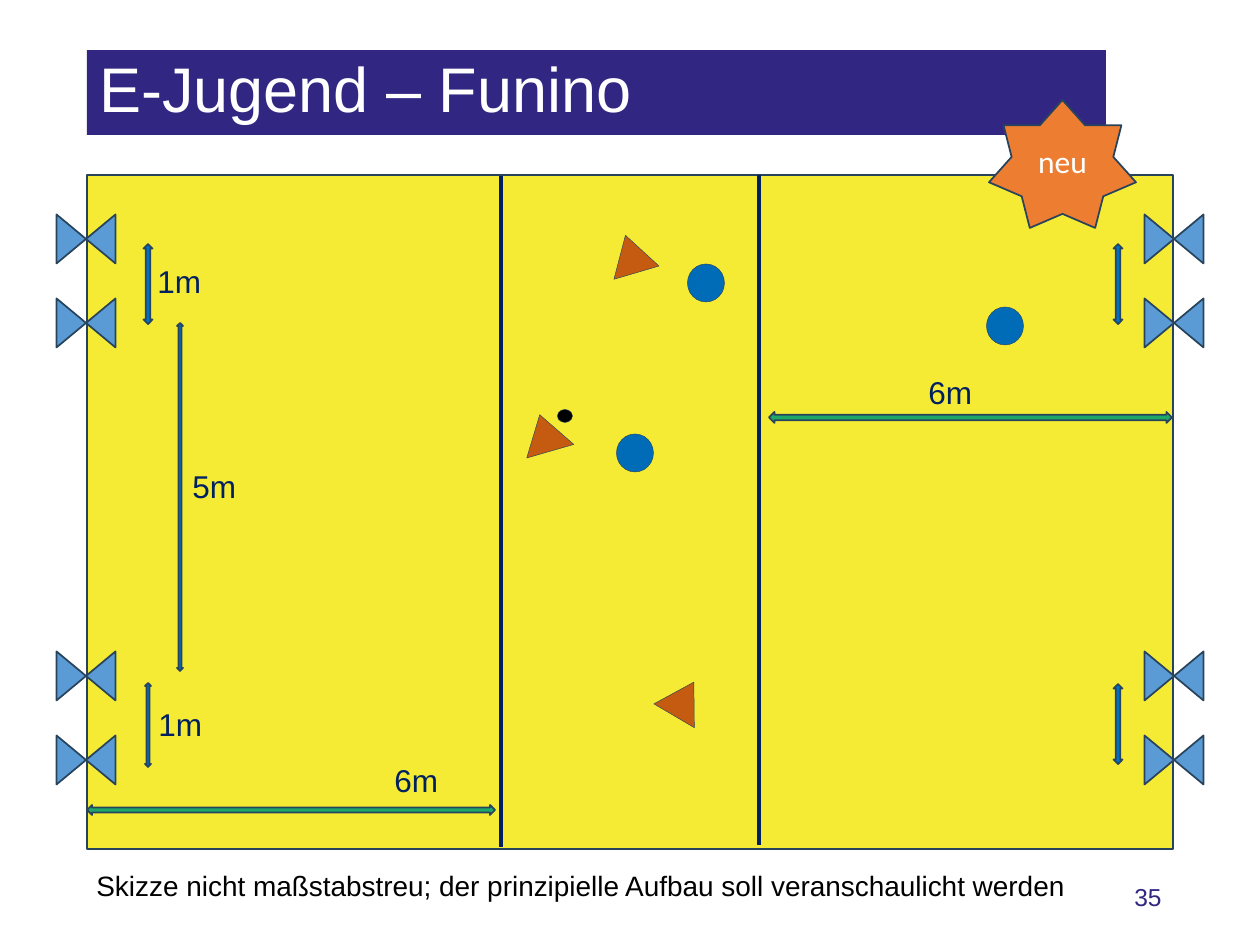
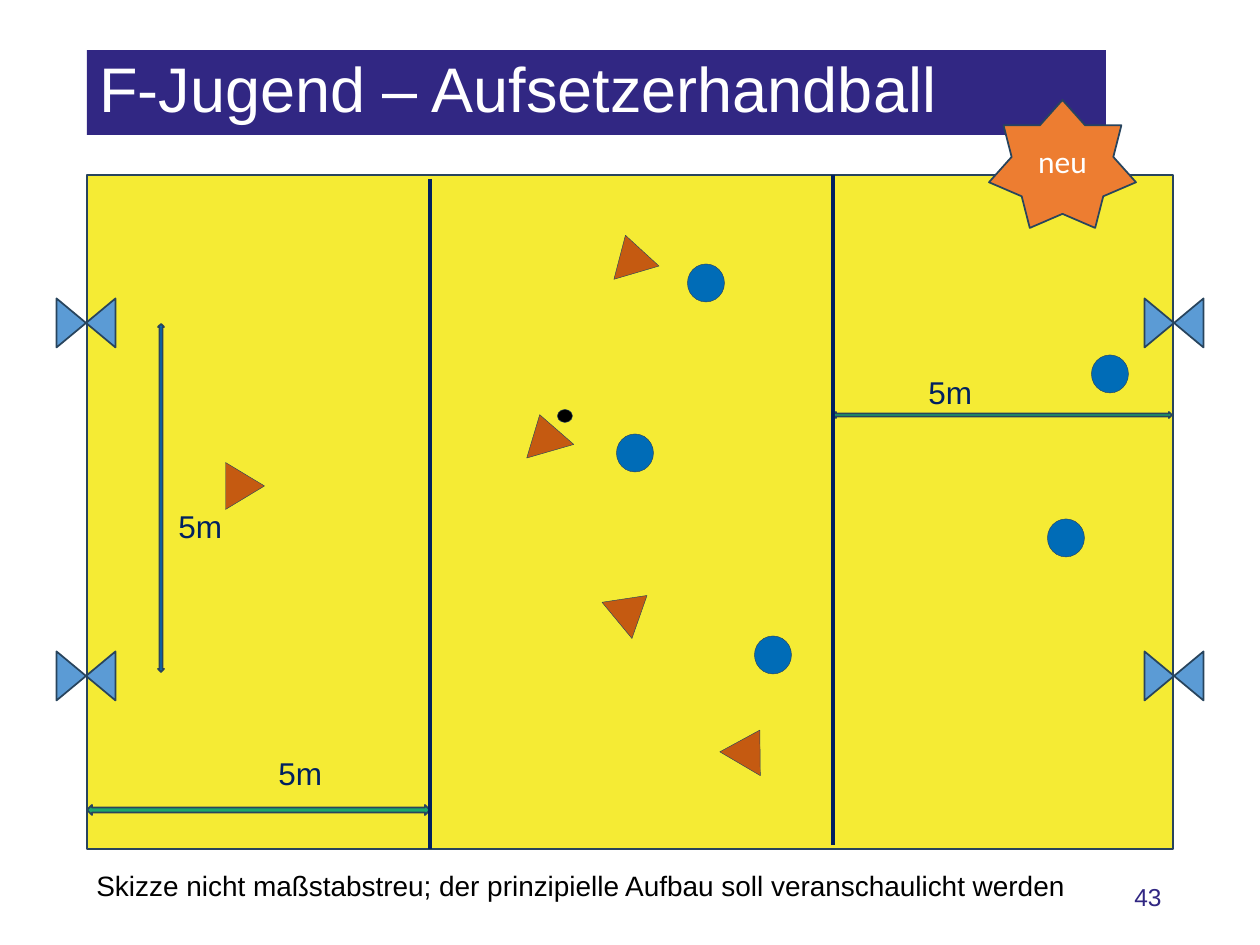
import pptx
import pptx.util
import pptx.dml.color
import pptx.enum.shapes
import pptx.enum.text
import pptx.oxml.ns
import lxml.etree

EMU_PER_PX = 914400 / 126
COLOURS = {
    "brand": "312783", "white": "FFFFFF", "black": "000000", "field": "F5EB34",
    "outline": "28445D", "goal": "5B9BD5", "goal_distance": "0070C0",
    "zone_distance": "1DA868", "navy": "002060", "attacker": "C55A11",
    "defender": "006CB7", "badge": "ED7D31",
}
PRESETS = pptx.enum.shapes.MSO_SHAPE
ALIGN = pptx.enum.text.PP_ALIGN
ANCHOR = pptx.enum.text.MSO_ANCHOR

# Shared geometry of the pitch
FIELD = (87, 175, 1086, 674)
GOAL_LINES = (86, 1174)
CAPTION = "Skizze nicht maßstabstreu; der prinzipielle Aufbau soll veranschaulicht werden"


def px(*lengths):
    return [pptx.util.Emu(round(length * EMU_PER_PX)) for length in lengths]


def colour(name):
    return pptx.dml.color.RGBColor.from_string(COLOURS[name])


def write_text(shape, text, size, color, font="Arial", align=ALIGN.LEFT,
               anchor=ANCHOR.TOP, wrap=True, spacing=None):
    frame = shape.text_frame
    frame.word_wrap = wrap
    if not wrap:
        frame.auto_size = pptx.enum.text.MSO_AUTO_SIZE.SHAPE_TO_FIT_TEXT
    frame.vertical_anchor = anchor
    paragraph = frame.paragraphs[0]
    paragraph.alignment = align
    if spacing:
        paragraph.line_spacing = spacing
    run = paragraph.add_run()
    run.text = text
    run.font.name = font
    run.font.size = pptx.util.Pt(size)
    run.font.color.rgb = colour(color)


def add_text(slide, box, text, **text_format):
    write_text(slide.shapes.add_textbox(*px(*box)), text, **text_format)


def add_preset(slide, preset, box, fill, line_width=1, rotation=0):
    shape = slide.shapes.add_shape(preset, *px(*box))
    shape.shadow.inherit = False
    shape.rotation = rotation
    shape.fill.solid()
    shape.fill.fore_color.rgb = colour(fill)
    if line_width:
        shape.line.color.rgb = colour("outline")
        shape.line.width = pptx.util.Pt(line_width)
    else:
        shape.line.fill.background()
    return shape


def add_centred(slide, preset, centre, size, fill, **style):
    (x, y), (width, height) = centre, size
    box = (x - width / 2, y - height / 2, width, height)
    return add_preset(slide, preset, box, fill, **style)


def add_goal_distance(slide, x, top, length, thickness):
    add_centred(slide, PRESETS.LEFT_RIGHT_ARROW, (x, top + length / 2),
                (length, thickness), "goal_distance", rotation=90)


def add_zone_line(slide, x, top, bottom):
    line = slide.shapes.add_connector(
        pptx.enum.shapes.MSO_CONNECTOR.STRAIGHT, *px(x, top, x, bottom))
    line.line.color.rgb = colour("navy")
    line.line.width = pptx.util.Pt(2.25)
    lxml.etree.SubElement(line._element.spPr, pptx.oxml.ns.qn("a:effectLst"))


def add_attacker(slide, centre, rotation, size=(47, 39)):
    add_centred(slide, PRESETS.ISOSCELES_TRIANGLE, centre, size, "attacker",
                line_width=0.25, rotation=rotation)


def add_defender(slide, centre):
    add_centred(slide, PRESETS.OVAL, centre, (37, 38), "defender", line_width=0.25)


def add_frame(slide, title, number):
    band = add_preset(slide, PRESETS.RECTANGLE, (87, 50, 1019, 85), "brand", line_width=0)
    write_text(band, title, size=36, color="white", anchor=ANCHOR.MIDDLE, spacing=0.9)
    add_text(slide, (890, 876, 284, 50), str(number), size=14, color="brand",
             align=ALIGN.RIGHT)
    add_text(slide, (84, 862, 1000, 47), CAPTION, size=16, color="black", wrap=False)


def add_badge(slide):
    star = add_preset(slide, PRESETS.STAR_7_POINT, (989, 100, 147, 128), "badge")
    write_text(star, "neu", size=18, color="white", font="Calibri",
               align=ALIGN.CENTER, anchor=ANCHOR.MIDDLE)


def build_game(presentation, game):
    slide = presentation.slides.add_slide(presentation.slide_layouts[6])
    add_frame(slide, game["title"], game["number"])
    add_preset(slide, PRESETS.RECTANGLE, FIELD, "field")

    # Goals stand on both goal lines at the same heights
    for x in GOAL_LINES:
        for y in game["goal_heights"]:
            add_centred(slide, PRESETS.FLOWCHART_COLLATE, (x, y), (49, 59), "goal",
                        rotation=90)

    # Zones and distances
    for arrow in game["goal_distances"]:
        add_goal_distance(slide, *arrow)
    for box in game["zone_distances"]:
        add_preset(slide, PRESETS.LEFT_RIGHT_ARROW, box, "zone_distance")
    for line in game["zone_lines"]:
        add_zone_line(slide, *line)
    for text, left, top in game["labels"]:
        add_text(slide, (left, top, 69, 50), text, size=18, color="navy", wrap=False)

    # Players and ball; the first two of each team are the same in every game
    add_attacker(slide, (631, 254), 343.6)
    add_attacker(slide, (545, 433), 343.9, size=(49, 38))
    for centre, rotation in game["attackers"]:
        add_attacker(slide, centre, rotation)
    for centre in [(706, 283), (635, 453)] + game["defenders"]:
        add_defender(slide, centre)
    add_centred(slide, PRESETS.OVAL, (565, 416), (15, 13), "black", line_width=0.25)
    add_badge(slide)


FUNINO = {
    "title": "E-Jugend – Funino",
    "number": 35,
    "goal_heights": (239, 323, 676, 760),
    # x, top, length, thickness
    "goal_distances": [(180, 323, 348, 6), (148, 244, 80, 9), (148, 683, 84, 6),
                       (1118, 244, 80, 9), (1118, 684, 80, 9)],
    "zone_distances": [(87, 805, 408, 10), (769, 412, 403, 11)],
    # x, top, bottom
    "zone_lines": [(501, 176, 847), (759, 175, 845)],
    "labels": [("5m", 180, 461), ("1m", 146, 699), ("1m", 145, 256),
               ("6m", 382, 755), ("6m", 916, 367)],
    "attackers": [((684, 699), 30.5)],
    "defenders": [(1005, 326)],
}

AUFSETZERHANDBALL = {
    "title": "F-Jugend – Aufsetzerhandball",
    "number": 43,
    "goal_heights": (323, 676),
    "goal_distances": [(161, 324, 348, 6)],
    "zone_distances": [(87, 805, 343, 10), (833, 412, 339, 6)],
    "zone_lines": [(430, 179, 849), (833, 175, 845)],
    "labels": [("5m", 166, 501), ("5m", 266, 748), ("5m", 916, 367)],
    "attackers": [((245, 486), 90), ((632, 608), 50.4), ((750, 747), 30.5)],
    "defenders": [(1066, 538), (773, 655), (1110, 374)],
}


def main():
    presentation = pptx.Presentation()
    presentation.slide_width, presentation.slide_height = px(1260, 945)
    for game in (FUNINO, AUFSETZERHANDBALL):
        build_game(presentation, game)
    presentation.save("out.pptx")


if __name__ == "__main__":
    main()
